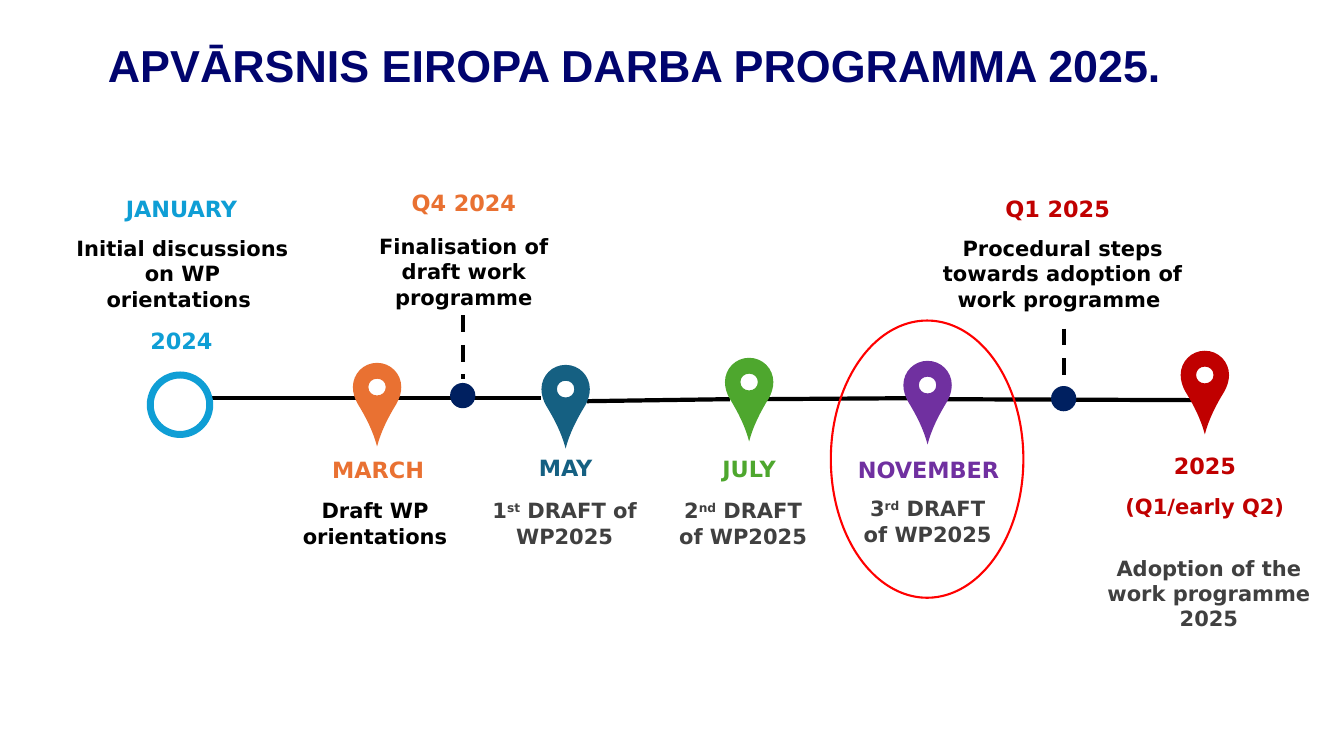
from dataclasses import dataclass

from lxml import etree
from pptx import Presentation
from pptx.dml.color import RGBColor
from pptx.enum.dml import MSO_LINE
from pptx.enum.shapes import MSO_CONNECTOR, MSO_SHAPE
from pptx.enum.text import MSO_ANCHOR, MSO_AUTO_SIZE, PP_ALIGN
from pptx.oxml.ns import qn
from pptx.util import Inches, Pt

STRAIGHT, OVAL = MSO_CONNECTOR.STRAIGHT, MSO_SHAPE.OVAL
CENTER, LEFT, MIDDLE = PP_ALIGN.CENTER, PP_ALIGN.LEFT, MSO_ANCHOR.MIDDLE
DASH, FIXED, GROW = MSO_LINE.DASH, MSO_AUTO_SIZE.NONE, MSO_AUTO_SIZE.SHAPE_TO_FIT_TEXT

BLACK, GREY, WHITE, NAVY = "000000", "404040", "FFFFFF", "002060"
SKY, ORANGE, TEAL, GREEN = "0F9ED5", "E97132", "156082", "4EA72E"
PURPLE, DARK_RED, RED, TITLE_BLUE = "7030A0", "C00000", "FF0000", "01046E"

HEADING_SIZE, NOTE_SIZE = 16, 15
NO_BREAK = chr(160)
PIN_WIDTH, PIN_HEIGHT, DOT = 0.48, 0.83, 0.23
PIN_SIDE = [(0.5, 1), (0.42, 0.82), (0.27, 0.65), (0.1, 0.49), (0.04, 0.43), (0, 0.36),
            (0, 0.29), (0, 0.13), (0.22, 0), (0.5, 0)]
PIN_OUTLINE = PIN_SIDE + [(1 - x, y) for x, y in PIN_SIDE[-2::-1]]
PIN_HOLE = [(0.32, 0.29), (0.32, 0.23), (0.4, 0.19), (0.5, 0.19), (0.6, 0.19), (0.68, 0.23),
            (0.68, 0.29), (0.68, 0.35), (0.6, 0.39), (0.5, 0.39), (0.4, 0.39), (0.32, 0.35),
            (0.32, 0.29)]


@dataclass
class Caption:
    """Centred text, placed by its middle and top relative to its region."""
    text: str
    middle: float
    top: float
    width: float
    color: str
    size: int = NOTE_SIZE
    height: float = 0.61


def heading(text, middle, top, width, color):
    """Make a one-line caption in the heading size."""
    return Caption(text, middle, top, width, color, HEADING_SIZE, 0.37)


def rgb(color):
    """Turn a hex string into a colour."""
    return RGBColor.from_string(color)


def set_font(paragraph, name, size, color):
    """Give a paragraph its bold font."""
    font = paragraph.font
    font.name, font.size, font.bold = name, Pt(size), True
    font.color.rgb = rgb(color)


def add_captions(slide, origin, captions):
    """Add captions around an origin; text between carets is raised."""
    left, top = origin
    for caption in captions:
        frame = slide.shapes.add_textbox(
            Inches(left + caption.middle - caption.width / 2), Inches(top + caption.top),
            Inches(caption.width), Inches(caption.height)).text_frame
        frame.word_wrap, frame.auto_size = True, GROW
        paragraph = frame.paragraphs[0]
        paragraph.alignment = CENTER
        for index, part in enumerate(caption.text.split("^")):
            run = paragraph.add_run()
            run.text = part
            if index % 2:
                run.font._element.set("baseline", "30000")
        set_font(paragraph, "DejaVu Sans", caption.size, caption.color)


def add_line(slide, start, end, dash=None):
    """Add a black line between two points."""
    line = slide.shapes.add_connector(STRAIGHT, *map(Inches, start + end))
    line.line.color.rgb, line.line.width = rgb(BLACK), Pt(3)
    if dash:
        line.line.dash_style = dash
    etree.SubElement(line._element.spPr, qn("a:effectLst"))


def add_oval(slide, box, outline, weight, fill=None):
    """Add an ellipse, hollow unless a fill is given."""
    oval = slide.shapes.add_shape(OVAL, *map(Inches, box))
    oval.shadow.inherit = False
    oval.line.color.rgb, oval.line.width = rgb(outline), Pt(weight)
    if fill:
        oval.fill.solid()
        oval.fill.fore_color.rgb = rgb(fill)
    else:
        oval.fill.background()


def bend(shape):
    """Turn each three straight segments of a freeform into one curve."""
    segments = list(shape._element.iter(qn("a:lnTo")))
    for index in range(0, len(segments), 3):
        first, *others = segments[index:index + 3]
        first.tag = qn("a:cubicBezTo")
        for segment in others:
            first.append(segment[0])
            segment.getparent().remove(segment)


def add_pin(slide, left, top, color):
    """Add a map pin with a round hole."""
    outline, hole = (
        [(Inches(left + x * PIN_WIDTH), Inches(top + y * PIN_HEIGHT)) for x, y in points]
        for points in (PIN_OUTLINE, PIN_HOLE))
    builder = slide.shapes.build_freeform(*outline[0])
    builder.add_line_segments(outline[1:])
    builder.move_to(*hole[0])
    builder.add_line_segments(hole[1:])
    pin = builder.convert_to_shape()
    bend(pin)
    pin.shadow.inherit = False
    pin.fill.solid()
    pin.fill.fore_color.rgb = rgb(color)
    pin.line.fill.background()


def draw_title(slide, box, text):
    """Place the slide title."""
    title = slide.shapes.title
    title.left, title.top, title.width, title.height = map(Inches, box)
    frame = title.text_frame
    frame.text, frame.vertical_anchor = text, MIDDLE
    frame.word_wrap, frame.auto_size = True, FIXED
    paragraph = frame.paragraphs[0]
    paragraph.alignment, paragraph.line_spacing = LEFT, 0.9
    set_font(paragraph, "Arial", 32, TITLE_BLUE)


def draw_track(slide, top, segments):
    """Draw the pieces of the time line, each with its drop from the top."""
    for start, start_drop, end, end_drop in segments:
        add_line(slide, (start, top + start_drop), (end, top + end_drop))


def draw_start(slide, origin):
    """Draw the opening ring with its captions."""
    left, top = origin
    add_captions(slide, origin, [
        heading("JANUARY", 1.15, 0, 1.43, SKY),
        Caption("Initial discussions on WP orientations ", 1.16, 0.4, 2.33, BLACK, height=0.86),
        heading("2024", 1.15, 1.31, 0.95, SKY)])
    add_oval(slide, (left + 0.84, top + 1.83, 0.59, 0.59), SKY, 5, WHITE)


def draw_milestone(slide, origin, captions):
    """Draw a pin centred below the origin in the colour of its heading."""
    middle, top = origin
    add_pin(slide, middle - PIN_WIDTH / 2, top, captions[0].color)
    add_captions(slide, origin, captions)


def draw_step(slide, origin, captions, stem, dot_top):
    """Draw captions above the track, a dashed stem and a dot."""
    middle, top = origin
    add_captions(slide, origin, captions)
    add_line(slide, (middle, top + stem[0]), (middle, top + stem[1]), DASH)
    add_oval(slide, (middle - DOT / 2, top + dot_top, DOT, DOT), NAVY, 1.5, NAVY)


def main():
    """Build the work programme time line."""
    deck = Presentation()
    deck.slide_width, deck.slide_height = Inches(13.33), Inches(7.5)
    slide = deck.slides.add_slide(deck.slide_layouts[5])
    draw_title(slide, (0.97, 0.33, 11.5, 0.68), "APVĀRSNIS EIROPA DARBA PROGRAMMA 2025.")
    draw_track(slide, 3.95, [(2.06, 0, 5.37, 0), (5.82, 0.03, 7.24, 0.01),
                             (7.58, 0.01, 9.07, 0), (9.21, 0.01, 11.87, 0.02)])
    draw_start(slide, (0.65, 1.89))
    milestones = [
        ((3.74, 3.6), [heading("MARCH", 0.01, 0.88, 1.79, ORANGE),
                       Caption("Draft WP orientations", -0.02, 1.29, 1.68, BLACK)]),
        ((5.61, 3.62), [heading("MAY", 0, 0.84, 1.79, TEAL),
                        Caption("1^st^ DRAFT of WP2025", -0.01, 1.27, 1.68, GREY)]),
        ((7.43, 3.55), [heading("JULY", 0, 0.92, 1.28, GREEN),
                        Caption("2^nd^ DRAFT of WP2025", -0.06, 1.34, 1.63, GREY)]),
        ((9.2, 3.58), [heading("NOVEMBER", 0.01, 0.9, 1.63, PURPLE),
                       Caption("3^rd^ DRAFT of WP2025", 0, 1.29, 1.52, GREY)]),
        ((11.95, 3.48), [heading("2025", 0, 0.96, 0.95, DARK_RED),
                         Caption("(Q1/early Q2)", 0, 1.37, 2.31, DARK_RED, height=0.35),
                         Caption("Adoption of the work programme 2025", 0.04, 1.98, 2.38,
                                 GREY, height=0.86)]),
    ]
    for origin, captions in milestones:
        draw_milestone(slide, origin, captions)
    draw_step(slide, (4.59, 1.83), [
        heading("Q4 2024", 0.01, 0, 2.12, ORANGE),
        Caption(f"Finalisation of draft{NO_BREAK}work programme", 0.01, 0.44, 2.78, BLACK,
                height=0.86)], (1.3, 1.93), 1.98)
    draw_step(slide, (10.55, 1.89), [
        heading("Q1 2025", -0.06, 0, 1.37, DARK_RED),
        Caption("Procedural steps towards adoption of work programme ", -0.01, 0.4, 2.58, BLACK,
                height=0.86)], (1.37, 2.09), 1.95)
    add_oval(slide, (8.24, 3.18, 1.91, 2.75), RED, 1.5)
    deck.save("out.pptx")


if __name__ == "__main__":
    main()
